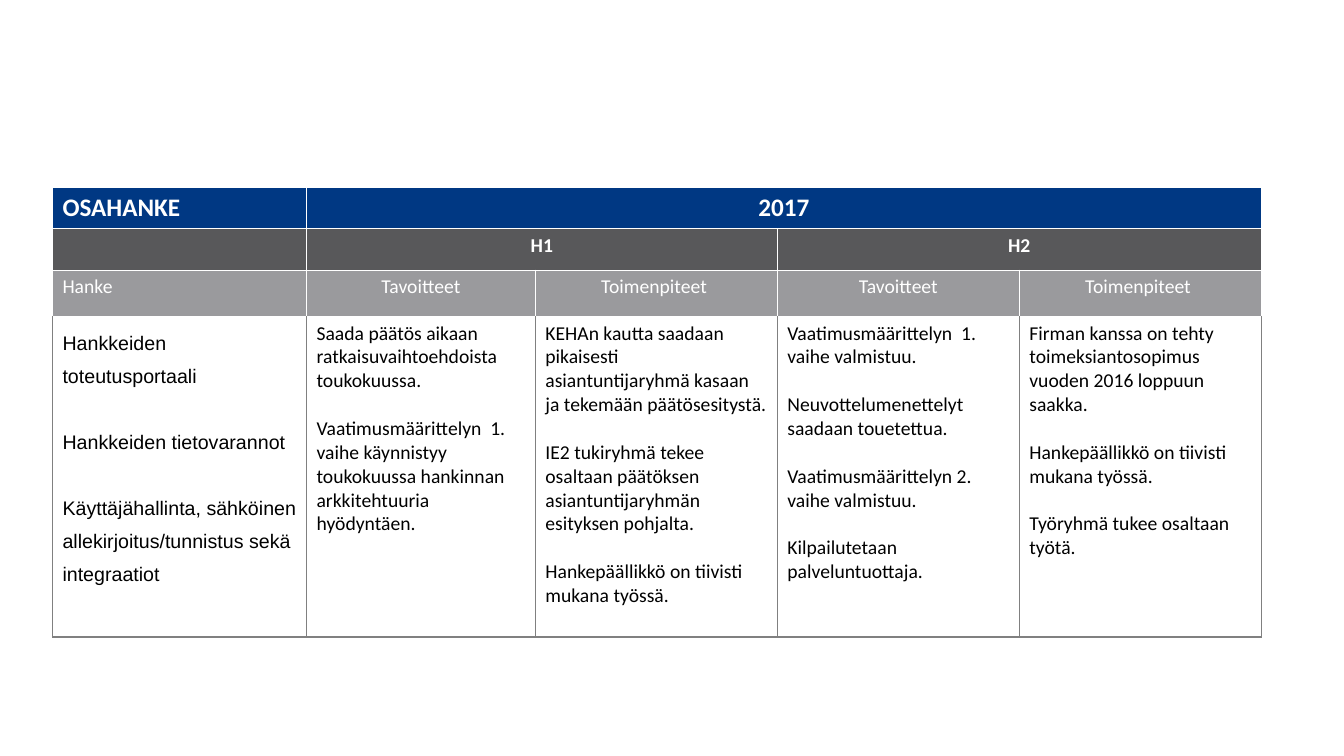
"""Build the 2017 project plan slide with its table of goals and actions."""
from lxml import etree
from pptx import Presentation
from pptx import util as u
from pptx.dml.color import RGBColor
from pptx.enum import text
from pptx.oxml import ns

WHITE, BLACK, GREY = "FFFFFF", "000000", "808080"
BLUE, DARK, LIGHT = "003883", "58585A", "9A9A9D"


def colour(value):
    return RGBColor.from_string(value)


def format_cell(cell, paragraphs, size, font_name, font_colour, fill, borders,
                bold=False, centred=False, line_spacing=1.0, gap=0):
    if fill:
        cell.fill.solid()
        cell.fill.fore_color.rgb = colour(fill)
    else:
        cell.fill.background()
    properties = cell._tc.get_or_add_tcPr()
    for index, (side, line_colour) in enumerate(zip("LRTB", borders)):
        line = etree.Element(ns.qn(f"a:ln{side}"), w=str(u.Pt(1)))
        solid = etree.SubElement(line, ns.qn("a:solidFill"))
        etree.SubElement(solid, ns.qn("a:srgbClr"), val=line_colour)
        properties.insert(index, line)
    for index, wording in enumerate(paragraphs):
        frame = cell.text_frame
        paragraph = frame.add_paragraph() if index else frame.paragraphs[0]
        paragraph.line_spacing = line_spacing
        paragraph.space_before = u.Pt(gap if index else 0)
        if centred:
            paragraph.alignment = text.PP_ALIGN.CENTER
        run = paragraph.add_run()
        run.text = wording
        run.font.size = u.Pt(size)
        run.font.name = font_name
        run.font.bold = bold
        run.font.color.rgb = colour(font_colour)


presentation = Presentation()
presentation.slide_width = u.Inches(13.33)
presentation.slide_height = u.Inches(7.5)
slide = presentation.slides.add_slide(presentation.slide_layouts[6])

column_widths = [2.52, 2.27, 2.4, 2.4, 2.4]
row_heights = [0.41, 0.41, 0.46, 3.18]
table = slide.shapes.add_table(
    len(row_heights), len(column_widths), u.Inches(0.52), u.Inches(1.86),
    u.Inches(sum(column_widths)), u.Inches(sum(row_heights))).table
for column, width in zip(table.columns, column_widths):
    column.width = u.Inches(width)
for row, height in zip(table.rows, row_heights):
    row.height = u.Inches(height)
for row, first, last in [(0, 1, 4), (1, 1, 2), (1, 3, 4)]:
    table.cell(row, first).merge(table.cell(row, last))

headers = [
    (["OSAHANKE", "2017", "", "", ""], BLUE, 18, True),
    (["", "H1", "", "H2", ""], DARK, 14, True),
    (["Hanke", "Tavoitteet", "Toimenpiteet ", "Tavoitteet", "Toimenpiteet "],
     LIGHT, 14, False),
]
for row, (labels, fill, size, bold) in enumerate(headers):
    for column, label in enumerate(labels):
        format_cell(table.cell(row, column), [label] if label else [], size,
                    "Calibri", WHITE, fill, [WHITE] * 4, bold, column > 0)

plan = [
    ["Hankkeiden toteutusportaali",
     "Hankkeiden tietovarannot",
     "Käyttäjähallinta, sähköinen allekirjoitus/tunnistus sekä integraatiot"],
    ["Saada päätös aikaan ratkaisuvaihtoehdoista toukokuussa.",
     "Vaatimusmäärittelyn  1. vaihe käynnistyy toukokuussa hankinnan "
     "arkkitehtuuria hyödyntäen."],
    ["KEHAn kautta saadaan pikaisesti asiantuntijaryhmä kasaan ja tekemään "
     "päätösesitystä.",
     "IE2 tukiryhmä tekee osaltaan päätöksen asiantuntijaryhmän esityksen "
     "pohjalta.",
     "Hankepäällikkö on tiivisti mukana työssä."],
    ["Vaatimusmäärittelyn  1. vaihe valmistuu.",
     "Neuvottelumenettelyt saadaan touetettua.",
     "Vaatimusmäärittelyn 2. vaihe valmistuu.",
     "Kilpailutetaan palveluntuottaja."],
    ["Firman kanssa on tehty toimeksiantosopimus vuoden 2016 loppuun saakka.",
     "Hankepäällikkö on tiivisti mukana työssä.",
     "Työryhmä tukee osaltaan työtä."],
]
for column, paragraphs in enumerate(plan):
    font_name, line_spacing, gap = (
        ("Calibri", 1.0, 17) if column else ("Arial", 1.5, 23.6))
    format_cell(table.cell(3, column), paragraphs, 14, font_name, BLACK, None,
                [GREY, GREY, WHITE, GREY], line_spacing=line_spacing, gap=gap)

presentation.save("out.pptx")
